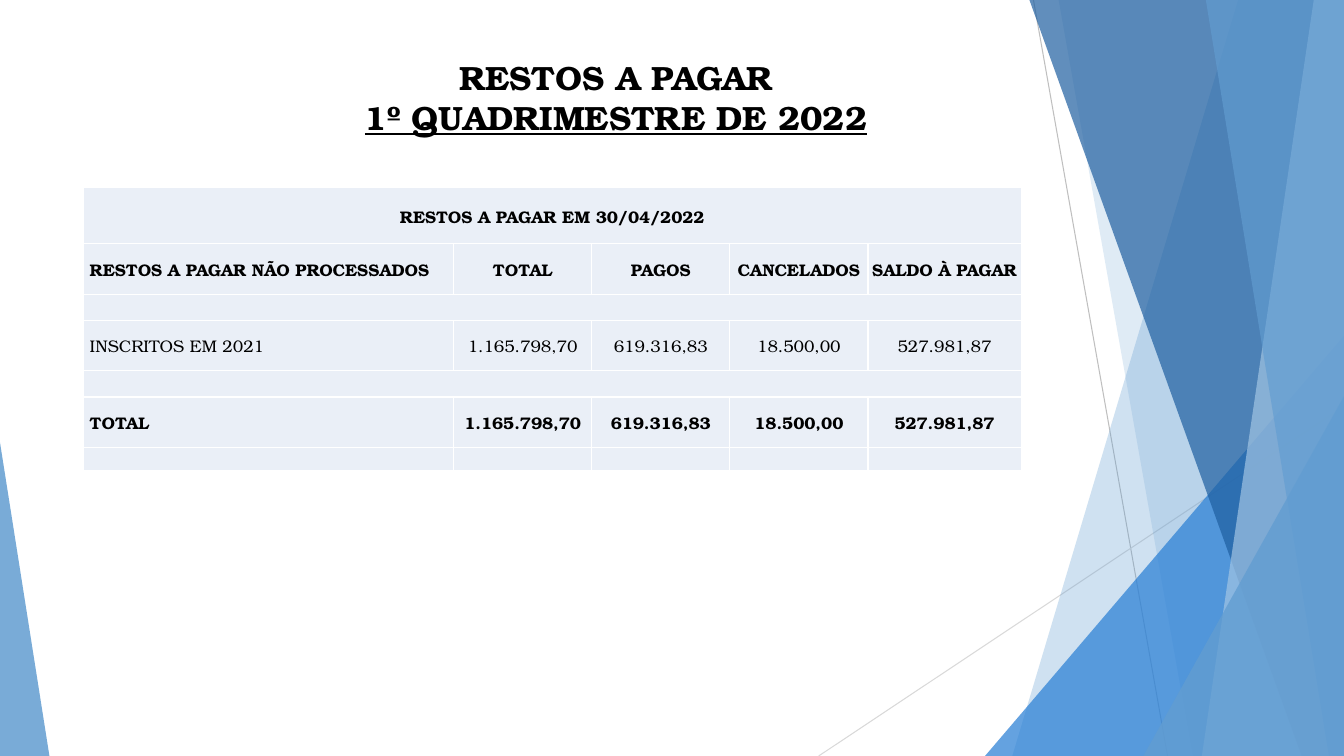
from lxml import etree
from pptx import Presentation
from pptx.dml.color import RGBColor
from pptx.enum import shapes, text
from pptx.oxml import ns
from pptx.util import Inches, Pt

FACE = "TeX Gyre Bonum"
BLACK = RGBColor(0, 0, 0)
WHITE = RGBColor(0xFF, 0xFF, 0xFF)
PALE = RGBColor(0xEA, 0xEF, 0xF7)
SKY = RGBColor(0x62, 0x9D, 0xD1)
AZURE = RGBColor(0x29, 0x7F, 0xD5)
NAVY = RGBColor(0x1F, 0x5F, 0xA0)
MIST = RGBColor(0xA1, 0xC4, 0xE3)
GREY = RGBColor(0xBF, 0xBF, 0xBF)
SILVER = RGBColor(0xD9, 0xD9, 0xD9)

WIDE, HIGH = 13.33, 7.5
COLS = [3.67, 1.37, 1.37, 1.37, 1.52]
ROWS = [0.56, 0.5, 0.26, 0.5, 0.26, 0.5, 0.23]
SUMS = ["1.165.798,70", "619.316,83", "18.500,00", "527.981,87"]
BLANK = [""] * 5
CELLS = [
    ["RESTOS A PAGAR EM 30/04/2022"] + [""] * 4,
    ["RESTOS A PAGAR NÃO PROCESSADOS", "TOTAL", "PAGOS", "CANCELADOS",
     "SALDO À PAGAR"],
    BLANK,
    ["INSCRITOS EM 2021"] + SUMS,
    BLANK,
    ["TOTAL"] + SUMS,
    BLANK,
]
MERGED = (0, 2, 4)
PLAIN = 3


def sub(node, tag, **attrs):
    return etree.SubElement(node, ns.qn(tag), **attrs)


def paint(shape, color, alpha):
    """Fill with a see-through colour, without line or shadow."""
    shape.shadow.inherit = False
    shape.line.fill.background()
    shape.fill.solid()
    shape.fill.fore_color.rgb = color
    tone = shape.element.spPr.find(".//" + ns.qn("a:srgbClr"))
    sub(tone, "a:alpha", val=str(alpha * 1000))


def ray(slide, start, end, color):
    ends = [Inches(v) for v in start + end]
    line = slide.shapes.add_connector(shapes.MSO_CONNECTOR.STRAIGHT, *ends)
    line.line.color.rgb = color
    line.line.width = Pt(0.75)
    sub(line.element.spPr, "a:effectLst")


def band(slide, top, foot, color, alpha):
    """Fill from a slanted left edge to the right side of the slide."""
    pen = slide.shapes.build_freeform(Inches(top), 0)
    edge = [(WIDE, 0), (WIDE, HIGH), (foot, HIGH)]
    pen.add_line_segments([(Inches(x), Inches(y)) for x, y in edge])
    paint(pen.convert_to_shape(), color, alpha)


def wedge(slide, left, top, width, tip, color, alpha):
    """Draw a triangle that stands on the bottom of the slide."""
    shape = slide.shapes.add_shape(
        shapes.MSO_SHAPE.ISOSCELES_TRIANGLE, Inches(left), Inches(top),
        Inches(width), Inches(HIGH - top))
    shape.adjustments[0] = tip
    paint(shape, color, alpha)


def style(para, size, bold, align):
    para.alignment = align
    font = para.font
    font.name, font.size, font.bold = FACE, Pt(size), bold
    font.color.rgb = BLACK


def heading(slide):
    title = slide.shapes.title
    title.element.getparent().append(title.element)
    title.left, title.top = Inches(1.52), Inches(0.51)
    title.width, title.height = Inches(9.18), Inches(1.05)
    frame = title.text_frame
    frame.auto_size = text.MSO_AUTO_SIZE.NONE
    frame.vertical_anchor = text.MSO_ANCHOR.TOP
    para = frame.paragraphs[0]
    style(para, 24, True, text.PP_ALIGN.CENTER)
    para.add_run().text = "RESTOS A PAGAR"
    para.add_line_break()
    run = para.add_run()
    run.text = "1º QUADRIMESTRE DE 2022"
    run.font.underline = True


def border(cell):
    props = cell._tc.get_or_add_tcPr()
    for side in "LRTB":
        line = sub(props, f"a:ln{side}", w=str(Pt(1)))
        sub(sub(line, "a:solidFill"), "a:srgbClr", val=str(WHITE))


def fill(cell, words, bold, left):
    border(cell)
    cell.fill.solid()
    cell.fill.fore_color.rgb = PALE
    cell.vertical_anchor = text.MSO_ANCHOR.MIDDLE
    cell.margin_left = Inches(0.06 if left else 0.01)
    cell.margin_right = cell.margin_top = Inches(0.01)
    cell.margin_bottom = 0
    para = cell.text_frame.paragraphs[0]
    if words:
        para.text = words
    align = text.PP_ALIGN.LEFT if left else text.PP_ALIGN.CENTER
    style(para, 12 if words else 8, bold, align)


def grid(slide):
    table = slide.shapes.add_table(
        len(ROWS), len(COLS), Inches(0.83), Inches(1.86),
        Inches(sum(COLS)), Inches(sum(ROWS))).table
    table.first_row = table.horz_banding = False
    for col, width in zip(table.columns, COLS):
        col.width = Inches(width)
    for r, (row, height) in enumerate(zip(table.rows, ROWS)):
        row.height = Inches(height)
        for c, words in enumerate(CELLS[r]):
            left = c == 0 and r not in MERGED
            fill(table.cell(r, c), words, r != PLAIN, left)
    for r in MERGED:
        table.cell(r, 0).merge(table.cell(r, len(COLS) - 1))


def main():
    deck = Presentation()
    deck.slide_width, deck.slide_height = Inches(WIDE), Inches(HIGH)
    slide = deck.slides.add_slide(deck.slide_layouts.get_by_name("Title Only"))
    ray(slide, (10.25, 0), (11.58, HIGH), GREY)
    ray(slide, (WIDE, 4.03), (8.12, HIGH), SILVER)
    band(slide, 12.28, 10.04, SKY, 30)
    band(slide, 10.5, 11.83, SKY, 20)
    wedge(slide, 9.77, 3.33, 3.56, 1, AZURE, 72)
    band(slide, 10.21, 12.91, NAVY, 70)
    band(slide, 13.03, 11.92, MIST, 70)
    band(slide, 11.96, 13.18, SKY, 65)
    wedge(slide, 11.34, 3.93, 1.99, 1, SKY, 80)
    wedge(slide, 0, 4.39, 0.49, 0, SKY, 85)
    heading(slide)
    grid(slide)
    deck.save("out.pptx")


if __name__ == "__main__":
    main()
